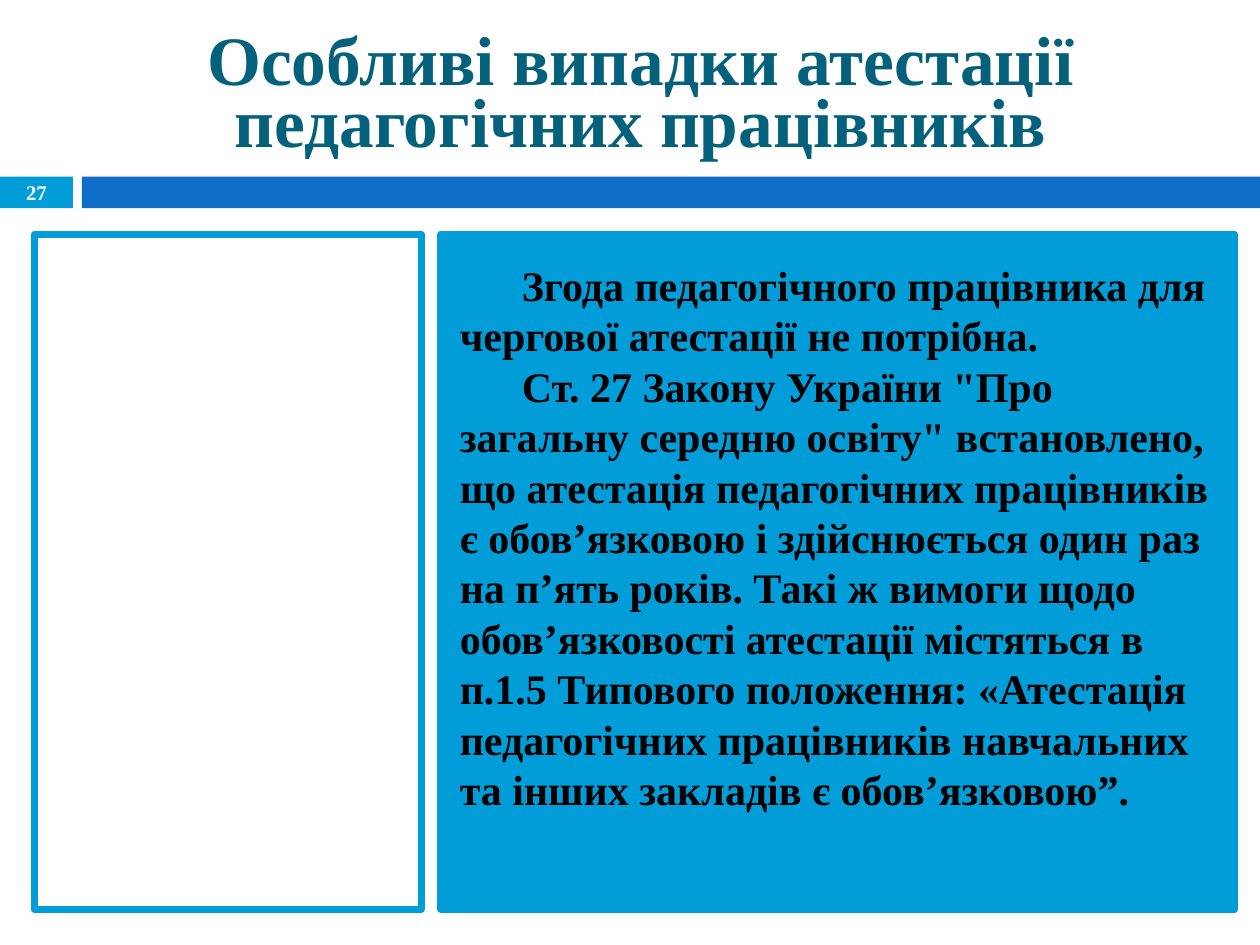
from dataclasses import dataclass
from typing import Optional

import pptx
import pptx.dml.color
import pptx.enum.shapes
import pptx.enum.text
import pptx.util

Cm = pptx.util.Cm
Pt = pptx.util.Pt

COLORS = {
    "cyan": "009DD9",
    "blue": "0F6FC6",
    "teal": "04617B",
    "white": "FFFFFF",
    "black": "000000",
}
FONT = "Times New Roman"
STRIPE_TOP, STRIPE_HEIGHT = 3.56, 0.64
PANEL_TOP, PANEL_HEIGHT = 4.72, 13.61
NUMBER_WIDTH = 1.47

TITLE = "Особливі випадки атестації педагогічних працівників"
PARAGRAPHS = [
    "Згода педагогічного працівника для чергової атестації не потрібна.",
    "Ст. 27 Закону України \"Про загальну середню освіту\" встановлено, "
    "що атестація педагогічних працівників є обов’язковою і здійснюється "
    "один раз на п’ять років. Такі ж вимоги щодо обов’язковості атестації "
    "містяться в п.1.5 Типового положення: «Атестація педагогічних "
    "працівників навчальних та інших закладів є обов’язковою”.",
]


@dataclass
class Block:
    left: float
    top: float
    width: float
    height: float
    fill: Optional[str] = None
    outline: Optional[str] = None


def rgb(name: str) -> pptx.dml.color.RGBColor:
    return pptx.dml.color.RGBColor.from_string(COLORS[name])


def draw_block(slide, block: Block):
    shape = slide.shapes.add_shape(
        pptx.enum.shapes.MSO_SHAPE.RECTANGLE,
        Cm(block.left), Cm(block.top), Cm(block.width), Cm(block.height))
    shape.shadow.inherit = False
    if block.fill:
        shape.fill.solid()
        shape.fill.fore_color.rgb = rgb(block.fill)
    else:
        shape.fill.background()
    if block.outline:
        shape.line.color.rgb = rgb(block.outline)
        shape.line.width = Pt(4)
    else:
        shape.line.fill.background()
    return shape


def set_frame(frame, insets: tuple, anchor) -> None:
    frame.word_wrap = True
    frame.auto_size = pptx.enum.text.MSO_AUTO_SIZE.NONE
    frame.vertical_anchor = anchor
    (frame.margin_left, frame.margin_top,
     frame.margin_right, frame.margin_bottom) = map(Cm, insets)


def write(paragraph, text: str, size: float, color: str, align) -> None:
    paragraph.alignment = align
    run = paragraph.add_run()
    run.text = text
    run.font.name = FONT
    run.font.size = Pt(size)
    run.font.bold = True
    run.font.color.rgb = rgb(color)


def main() -> None:
    align = pptx.enum.text.PP_ALIGN
    anchor = pptx.enum.text.MSO_ANCHOR

    deck = pptx.Presentation()
    deck.slide_width, deck.slide_height = Cm(25.4), Cm(19.05)
    slide = deck.slides.add_slide(deck.slide_layouts[5])

    heading = slide.shapes.title
    heading.left, heading.top = Cm(1.7), Cm(0.76)
    heading.width, heading.height = Cm(22.43), Cm(2.41)
    set_frame(heading.text_frame, (0.25, 0.13, 0.25, 0.13), anchor.MIDDLE)
    heading_line = heading.text_frame.paragraphs[0]
    heading_line.line_spacing = 0.75
    write(heading_line, TITLE, 39.6, "teal", align.CENTER)

    number = draw_block(
        slide, Block(0, STRIPE_TOP, NUMBER_WIDTH, STRIPE_HEIGHT, "cyan"))
    set_frame(number.text_frame, (0, 0, 0, 0), anchor.MIDDLE)
    write(number.text_frame.paragraphs[0], "27", 11.9, "white", align.CENTER)

    draw_block(slide, Block(1.65, STRIPE_TOP, 23.75, STRIPE_HEIGHT, "blue"))
    draw_block(slide, Block(0.69, PANEL_TOP, 7.8, PANEL_HEIGHT,
                            outline="cyan"))

    explanation = draw_block(
        slide, Block(8.89, PANEL_TOP, 16, PANEL_HEIGHT, "cyan", "cyan"))
    frame = explanation.text_frame
    set_frame(frame, (0.38, 0.51, 0.38, 0.25), anchor.TOP)
    for index, text in enumerate(PARAGRAPHS):
        paragraph = frame.add_paragraph() if index else frame.paragraphs[0]
        paragraph.line_spacing = Pt(28.8)
        properties = paragraph._p.get_or_add_pPr()
        properties.set("marL", "0")
        properties.set("indent", str(int(Cm(1.25))))
        write(paragraph, text, 24, "black", align.LEFT)

    deck.save("out.pptx")


if __name__ == "__main__":
    main()
